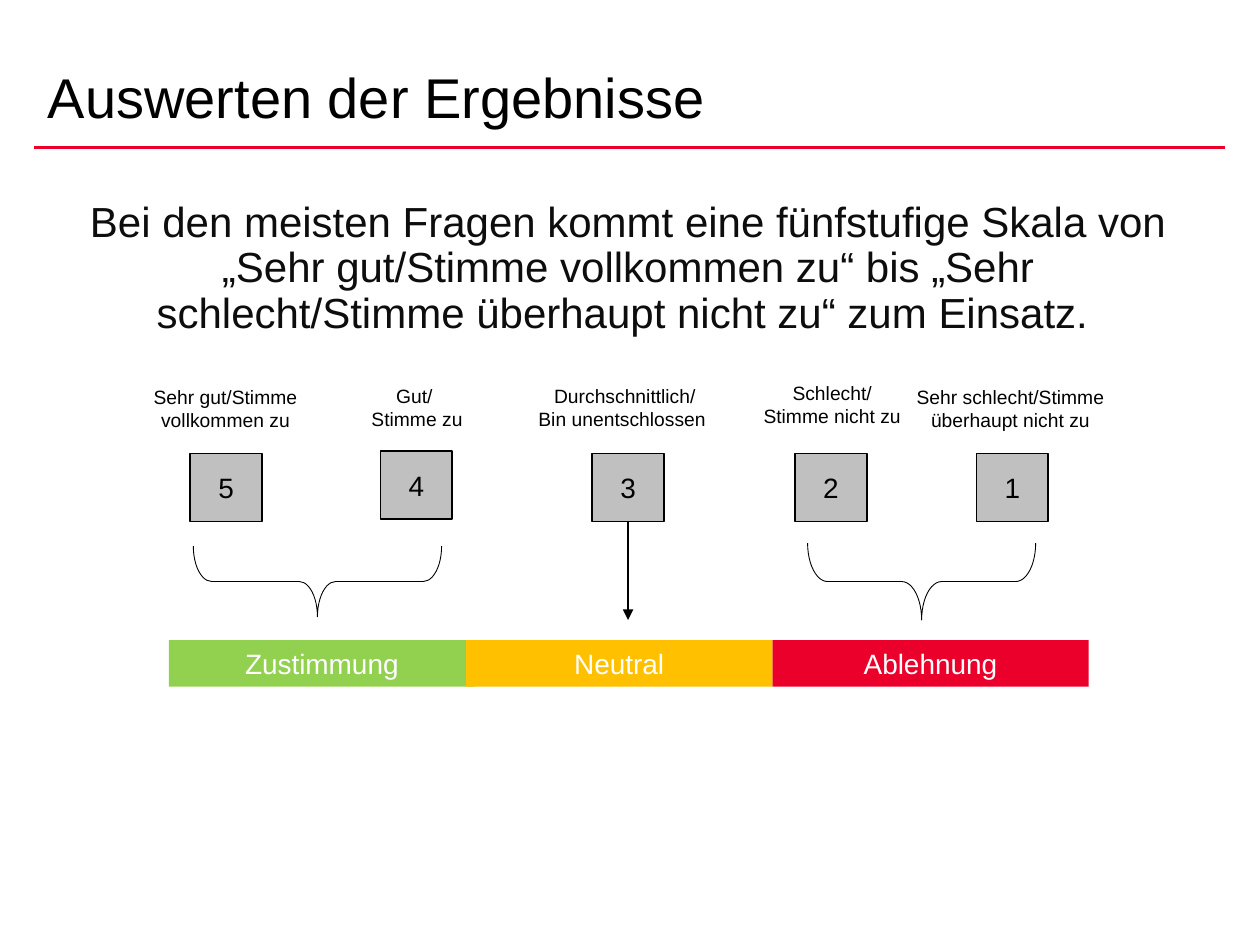
from dataclasses import dataclass

from lxml import etree
from pptx import Presentation
from pptx import util as u
from pptx.dml.color import RGBColor
from pptx.enum import shapes, text
from pptx.oxml import ns


@dataclass(frozen=True)
class Theme:
    font: str = "Arial"
    ink: str = "000000"
    body_ink: str = "0D0D0D"
    white: str = "FFFFFF"
    square: str = "C0C0C0"
    green: str = "92D050"
    amber: str = "FFC000"
    red: str = "EA002A"
    title_size: int = 32
    body_size: int = 24
    value_size: int = 16
    label_size: int = 11


@dataclass(frozen=True)
class Box:
    left: float
    top: float
    width: float
    height: float

    def inner(self, left, top, width, height):
        """Return a box placed relative to this one."""
        return Box(self.left + left, self.top + top, width, height)

    def lengths(self):
        return [u.Inches(side) for side in (self.left, self.top, self.width, self.height)]


THEME = Theme()

# Value, label paragraphs, then label left, top, width and square left, top
ANSWERS = [
    ("5", ["Sehr gut/Stimme vollkommen zu"], (0, 0.03, 1.78), (0.61, 0.62)),
    ("4", ["Gut/ ", "Stimme zu"], (1.87, 0.02, 1.08), (2.12, 0.6)),
    ("3", ["Durchschnittlich/\vBin unentschlossen "], (3.16, 0.02, 1.8), (3.8, 0.62)),
    ("2", ["Schlecht/\vStimme nicht zu"], (5.01, 0, 1.39), (5.41, 0.62)),
    ("1", ["Sehr schlecht/Stimme überhaupt nicht zu"], (6.27, 0.03, 1.7), (6.85, 0.62)),
]
BRACES = [(1.34, 0.65, 0.56, 1.97), (6.11, 0.73, 0.61, 1.81)]
RESULTS = [
    ("Zustimmung", THEME.green, 0, 2.43),
    ("Ablehnung", THEME.red, 4.79, 2.51),
    ("Neutral", THEME.amber, 2.36, 2.43),
]


def write(shape, paragraphs, size, color=THEME.ink, align=text.PP_ALIGN.CENTER,
          anchor=text.MSO_ANCHOR.TOP, spacing=None, wrap=True):
    frame = shape.text_frame
    frame.word_wrap = wrap
    frame.auto_size = text.MSO_AUTO_SIZE.NONE
    frame.vertical_anchor = anchor
    for index, words in enumerate(paragraphs):
        para = frame.add_paragraph() if index else frame.paragraphs[0]
        para.text = words
        para.alignment = align
        para.line_spacing = spacing
        para.font.name = THEME.font
        para.font.size = u.Pt(size)
        para.font.color.rgb = RGBColor.from_string(color)


def add_shape(page, kind, box, fill=None, line_width=None):
    shape = page.shapes.add_shape(kind, *box.lengths())
    shape.shadow.inherit = False
    if fill:
        shape.fill.solid()
        shape.fill.fore_color.rgb = RGBColor.from_string(fill)
    else:
        shape.fill.background()
    if line_width:
        shape.line.color.rgb = RGBColor.from_string(THEME.ink)
        shape.line.width = u.Pt(line_width)
    else:
        shape.line.fill.background()
    return shape


def add_line(page, start, end, color, width, arrow=False):
    line = page.shapes.add_connector(shapes.MSO_CONNECTOR.STRAIGHT, *start, *end)
    line.line.color.rgb = RGBColor.from_string(color)
    line.line.width = u.Pt(width)
    properties = line.element.spPr
    if arrow:
        outline = properties.find(ns.qn("a:ln"))
        etree.SubElement(outline, ns.qn("a:tailEnd"), type="triangle")
    etree.SubElement(properties, ns.qn("a:effectLst"))
    return line


def add_heading(page, box):
    title = page.shapes.title
    title.left, title.top, title.width, title.height = box.inner(0.01, 0, 9, 1.03).lengths()
    write(title, ["Auswerten der Ergebnisse"], THEME.title_size,
          align=text.PP_ALIGN.LEFT, anchor=text.MSO_ANCHOR.BOTTOM, spacing=0.8)
    left, bottom = u.Inches(box.left), u.Inches(box.top + box.height)
    add_line(page, (left, bottom), (left + u.Inches(box.width), bottom), THEME.red, 2)


def add_introduction(page, box):
    intro = page.shapes.add_textbox(*box.lengths())
    frame = intro.text_frame
    frame.margin_left = frame.margin_right = u.Inches(0.11)
    frame.margin_top = frame.margin_bottom = u.Inches(0.06)
    write(intro, ["Bei den meisten Fragen kommt eine fünfstufige Skala von "
                  "„Sehr gut/Stimme vollkommen zu“ bis „Sehr schlecht/Stimme "
                  "überhaupt nicht zu“ zum Einsatz. "],
          THEME.body_size, color=THEME.body_ink, spacing=u.Pt(26))


def add_answers(page, box):
    """Place the labelled squares and return them by value."""
    squares = {}
    for value, label, label_place, square_place in ANSWERS:
        caption = page.shapes.add_textbox(*box.inner(*label_place, 0.47).lengths())
        write(caption, label, THEME.label_size)
        square = add_shape(page, shapes.MSO_SHAPE.RECTANGLE,
                           box.inner(*square_place, 0.57, 0.54), THEME.square, 1)
        write(square, [value], THEME.value_size,
              anchor=text.MSO_ANCHOR.MIDDLE, wrap=False)
        squares[value] = square
    return squares


def add_links(page, box, neutral_square):
    """Draw the arrow and braces that lead from the squares to the results."""
    middle = neutral_square.left + neutral_square.width // 2
    arrow = add_line(page, (middle, neutral_square.top + neutral_square.height),
                     (middle, u.Inches(box.top + box.height)), THEME.ink, 1, arrow=True)
    arrow.begin_connect(neutral_square, 2)
    for place in BRACES:
        brace = add_shape(page, shapes.MSO_SHAPE.LEFT_BRACE, box.inner(*place), line_width=0.5)
        brace.rotation = 270
        brace.adjustments[0] = 0.26


def add_results(page, box):
    for name, color, left, width in RESULTS:
        bar = add_shape(page, shapes.MSO_SHAPE.RECTANGLE,
                        box.inner(left, 0, width, box.height), color)
        write(bar, [name], THEME.value_size, color=THEME.white,
              anchor=text.MSO_ANCHOR.MIDDLE)


def main():
    deck = Presentation()
    deck.slide_width, deck.slide_height = u.Inches(10), u.Inches(7.5)
    page = deck.slides.add_slide(deck.slide_layouts[5])
    add_heading(page, Box(0.27, 0.05, 9.45, 1.12))
    scale = Box(0.9, 2.98, 7.97, 1.94)
    squares = add_answers(page, scale)
    add_links(page, scale, squares["3"])
    add_results(page, Box(1.34, 5.08, 7.3, 0.37))
    add_introduction(page, Box(0.58, 1.53, 8.81, 1.28))
    deck.save("out.pptx")


if __name__ == "__main__":
    main()
